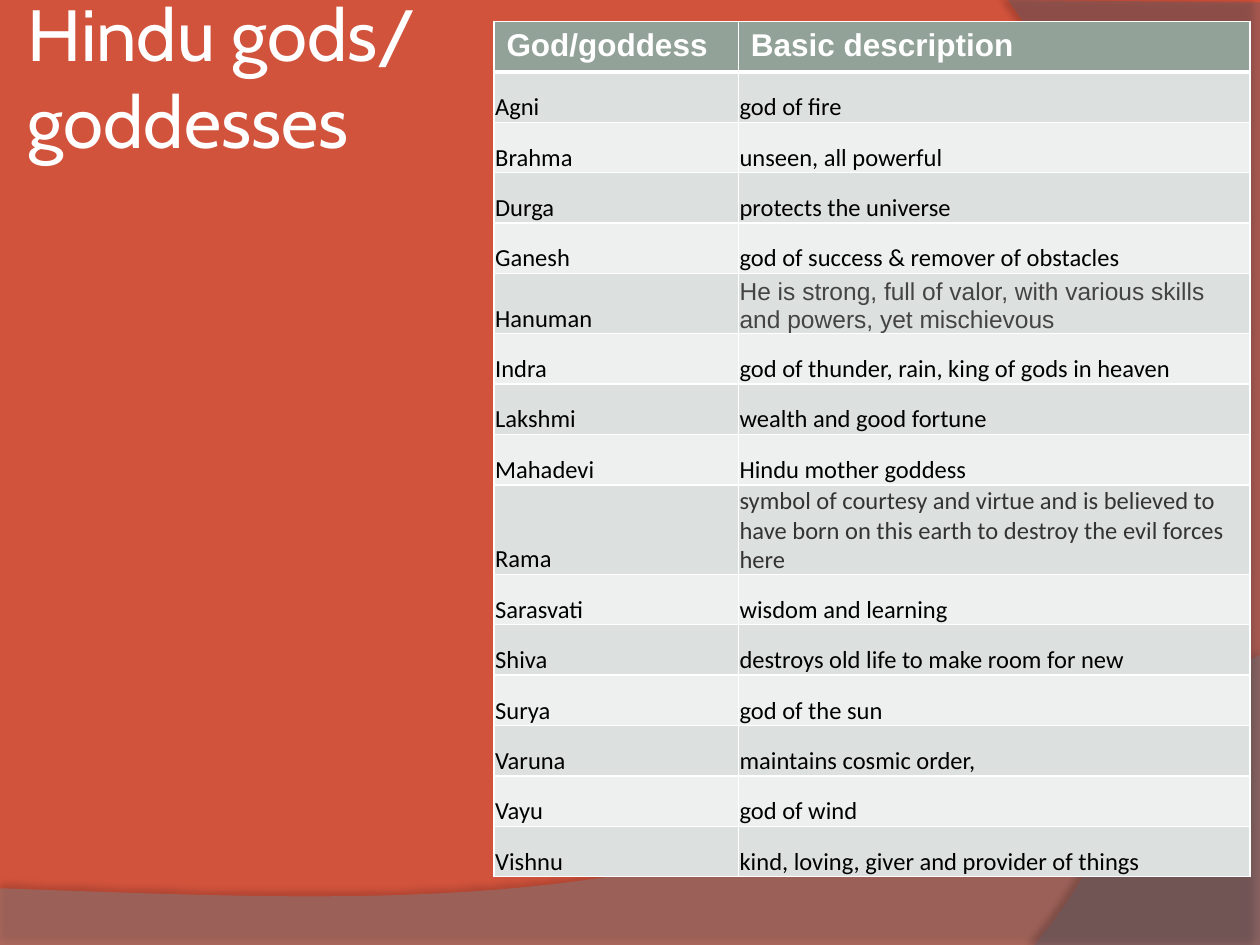
from lxml import etree
from pptx import Presentation
from pptx import util as u
from pptx.dml import color
from pptx.enum import text
from pptx.oxml import ns

COLORS = {
    "background": "D2533C",
    "wave": "818185",
    "side": "5E5E6B",
    "shadow": "000000",
    "white": "FFFFFF",
    "header": "93A299",
    "odd": "DCE0DE",
    "even": "EEF0EF",
    "body": "000000",
    "hanuman": "444444",
    "rama": "333333",
}

GODS = [
    ("Agni", "god of fire"),
    ("Brahma", "unseen, all powerful"),
    ("Durga", "protects the universe"),
    ("Ganesh", "god of success & remover of obstacles"),
    ("Hanuman", "He is strong, full of valor, with various skills and powers, yet mischievous"),
    ("Indra", "god of thunder, rain, king of gods in heaven"),
    ("Lakshmi", "wealth and good fortune"),
    ("Mahadevi", "Hindu mother goddess"),
    ("Rama", "symbol of courtesy and virtue and is believed to have born on this earth "
             "to destroy the evil forces here"),
    ("Sarasvati", "wisdom and learning"),
    ("Shiva", "destroys old life to make room for new"),
    ("Surya", "god of the sun"),
    ("Varuna", "maintains cosmic order,"),
    ("Vayu", "god of wind"),
    ("Vishnu", "kind, loving, giver and provider of things"),
]
TALL_ROWS = {"Hanuman": 0.47, "Rama": 0.7}
SPECIAL_FONTS = {"Hanuman": ("Arial", "hanuman"), "Rama": ("Calibri", "rama")}


def rgb(name):
    return color.RGBColor.from_string(COLORS[name])


def sub(parent, tag, **attrs):
    return etree.SubElement(parent, ns.qn(tag), {k: str(v) for k, v in attrs.items()})


def curve(p0, p1, p2, p3, steps=40):
    points = []
    for i in range(steps + 1):
        t = i / steps
        weights = ((1 - t) ** 3, 3 * t * (1 - t) ** 2, 3 * t * t * (1 - t), t ** 3)
        points.append(tuple(sum(w * p[axis] for w, p in zip(weights, (p0, p1, p2, p3)))
                            for axis in (0, 1)))
    return points


class Deck:
    def __init__(self, prs):
        self.slide = prs.slides.add_slide(prs.slide_layouts[6])
        fill = self.slide.background.fill
        fill.solid()
        fill.fore_color.rgb = rgb("background")

    def run(self, p, content, font, size, fill, bold=False):
        r = p.add_run()
        r.text = content
        r.font.name = font
        r.font.size = u.Pt(size)
        r.font.bold = bold
        r.font.color.rgb = rgb(fill)

    def swoosh(self, points, fill, opacity, shadow_opacity, distance, direction):
        points = [(u.Inches(x), u.Inches(y)) for x, y in points]
        builder = self.slide.shapes.build_freeform(*points[0])
        builder.add_line_segments(points[1:], close=True)
        sp = builder.convert_to_shape()
        sp.fill.solid()
        sp.fill.fore_color.rgb = rgb(fill)
        sp.line.fill.background()
        sp.shadow.inherit = False
        solid = sp.fill.fore_color._xFill.find(ns.qn("a:srgbClr"))
        sub(solid, "a:alpha", val=opacity * 1000)
        effects = sp._element.spPr.find(ns.qn("a:effectLst"))
        shadow = sub(effects, "a:outerShdw", blurRad=u.Pt(4), dist=u.Pt(distance),
                     dir=direction * 60000, algn="ctr", rotWithShape=0)
        clr = sub(shadow, "a:srgbClr", val=COLORS["shadow"])
        sub(clr, "a:alpha", val=shadow_opacity * 1000)

    def title(self, lines, left, top, width, height):
        box = self.slide.shapes.add_textbox(*map(u.Inches, (left, top, width, height)))
        tf = box.text_frame
        tf.word_wrap = True
        tf.vertical_anchor = text.MSO_ANCHOR.MIDDLE
        tf.margin_left = tf.margin_right = tf.margin_top = tf.margin_bottom = u.Inches(0.05)
        p = tf.paragraphs[0]
        for i, line in enumerate(lines):
            if i:
                p.add_line_break()
            self.run(p, line, "Cabin", 41.4, "white")

    def cell(self, cell, content, font, size, ink, fill, bold=False, top=1, bottom=1):
        self.run(cell.text_frame.paragraphs[0], content, font, size, ink, bold)
        tcPr = cell._tc.get_or_add_tcPr()
        for side, width in (("L", 1), ("R", 1), ("T", top), ("B", bottom)):
            ln = sub(tcPr, f"a:ln{side}", w=u.Pt(width))
            sub(sub(ln, "a:solidFill"), "a:srgbClr", val=COLORS["white"])
        cell.fill.solid()
        cell.fill.fore_color.rgb = rgb(fill)

    def table(self, headings, rows, left, top, widths):
        heights = [0.4] + [TALL_ROWS.get(name, 0.4) for name, _ in rows]
        frame = self.slide.shapes.add_table(
            len(heights), len(widths),
            *map(u.Inches, (left, top, sum(widths), sum(heights))))
        table = frame.table
        for col, width in zip(table.columns, widths):
            col.width = u.Inches(width)
        for row, height in zip(table.rows, heights):
            row.height = u.Inches(height)
        for c, heading in enumerate(headings):
            self.cell(table.cell(0, c), heading, "Arial", 18, "white", "header",
                      bold=True, bottom=3)
        for i, row in enumerate(rows, 1):
            fonts = ("Calibri", "body"), SPECIAL_FONTS.get(row[0], ("Calibri", "body"))
            for c, (content, (font, ink)) in enumerate(zip(row, fonts)):
                cell = table.cell(i, c)
                cell.vertical_anchor = text.MSO_ANCHOR.BOTTOM
                cell.margin_left = cell.margin_right = cell.margin_top = u.Inches(0.01)
                cell.margin_bottom = 0
                self.cell(cell, content, font, 14, ink, "odd" if i % 2 else "even",
                          top=3 if i == 1 else 1)


def main():
    prs = Presentation()
    prs.slide_width, prs.slide_height = u.Inches(10), u.Inches(7.5)
    deck = Deck(prs)
    wave = curve((10, 5.2), (5.59, 7.29), (3.91, 7.19), (0, 7.05))
    deck.swoosh([(0, 7.51), (10, 7.51)] + wave, "wave", 45, 35, 3.5, 270)
    side = curve((8.21, 7.5), (9.35, 6.19), (10.18, 3), (8, 0))
    deck.swoosh([(10, 0.02), (10, 7.5)] + side, "side", 40, 45, 4, 180)
    deck.title(["Hindu gods/", "goddesses"], 0.17, 0.25, 8.17, 0.7)
    deck.table(["God/goddess", "Basic description"], GODS, 3.92, 0.17, [1.94, 4.06])
    prs.save("out.pptx")


if __name__ == "__main__":
    main()
